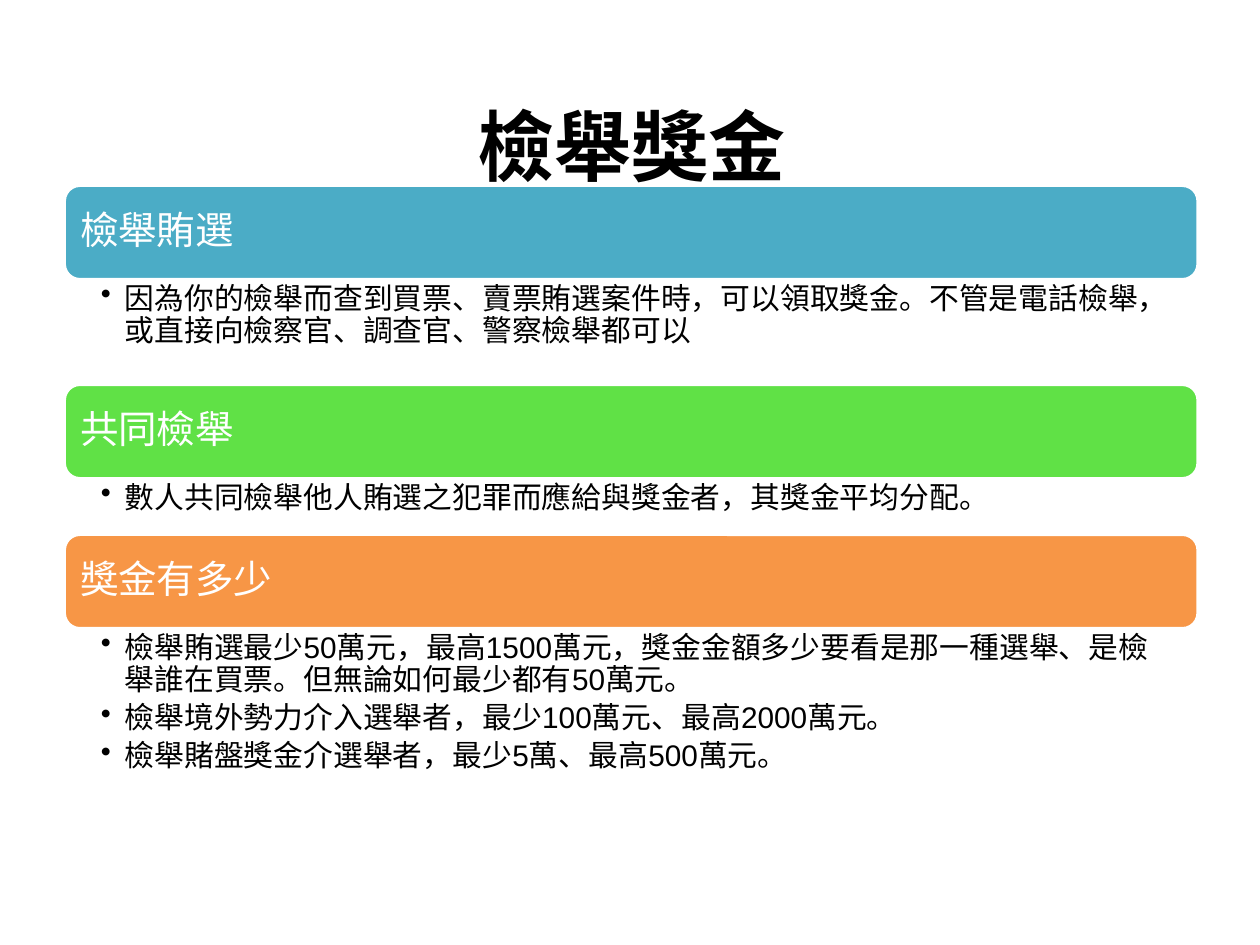
from lxml import etree
from pptx import Presentation
from pptx.dml.color import RGBColor
from pptx.enum.shapes import MSO_SHAPE as Shape
from pptx.enum.text import MSO_ANCHOR as Anchor, PP_ALIGN as Align
from pptx.oxml.ns import qn
from pptx.util import Inches, Pt

LEFT, WIDTH, BAR_HEIGHT = 0.51, 9, 0.75
SECTIONS = [
    ("檢舉賄選", "4BACC6", 0.83, [
        "因為你的檢舉而查到買票、賣票賄選案件時，可以領取獎金。不管是電話檢舉，或直接向檢察官、調查官、警察檢舉都可以",
    ]),
    ("共同檢舉", "60E146", 0.44, [
        "數人共同檢舉他人賄選之犯罪而應給與獎金者，其獎金平均分配。",
    ]),
    ("獎金有多少", "F79646", 1.74, [
        "檢舉賄選最少50萬元，最高1500萬元，獎金金額多少要看是那一種選舉、是檢舉誰在買票。但無論如何最少都有50萬元。",
        "檢舉境外勢力介入選舉者，最少100萬元、最高2000萬元。",
        "檢舉賭盤獎金介選舉者，最少5萬、最高500萬元。",
    ]),
]


def color(value):
    return RGBColor.from_string(value)


def add_run(paragraph, text, size, fill, bold=False):
    run = paragraph.add_run()
    run.text = text
    run.font.name = "Arial"
    run.font.size = Pt(size)
    run.font.bold = bold
    run.font.color.rgb = color(fill)


presentation = Presentation()
presentation.slide_width = Inches(10)
presentation.slide_height = Inches(7.5)
slide = presentation.slides.add_slide(presentation.slide_layouts[5])

title = slide.shapes.title
title.left, title.top = Inches(LEFT), Inches(0.52)
title.width, title.height = Inches(WIDTH), Inches(1.25)
title.text_frame.vertical_anchor = Anchor.MIDDLE
title_paragraph = title.text_frame.paragraphs[0]
title_paragraph.alignment = Align.CENTER
add_run(title_paragraph, "檢舉獎金", 44, "000000", bold=True)

top = 1.47
for heading, fill, list_height, items in SECTIONS:
    bar = slide.shapes.add_shape(Shape.ROUNDED_RECTANGLE, Inches(LEFT), Inches(top),
                                 Inches(WIDTH), Inches(BAR_HEIGHT))
    bar.shadow.inherit = False
    bar.fill.solid()
    bar.fill.fore_color.rgb = color(fill)
    bar.line.color.rgb = color("FFFFFF")
    bar.line.width = Pt(2)
    frame = bar.text_frame
    frame.vertical_anchor = Anchor.MIDDLE
    frame.margin_left = frame.margin_right = Inches(0.09)
    paragraph = frame.paragraphs[0]
    paragraph.alignment = Align.LEFT
    paragraph.line_spacing = 0.9
    paragraph.space_after = Pt(7.7)
    add_run(paragraph, heading, 22, "FFFFFF")
    top += BAR_HEIGHT

    box = slide.shapes.add_textbox(Inches(LEFT), Inches(top), Inches(WIDTH), Inches(list_height))
    frame = box.text_frame
    frame.word_wrap = True
    frame.margin_left, frame.margin_right = Inches(0.29), Inches(0.17)
    frame.margin_top = frame.margin_bottom = Inches(0.03)
    for index, item in enumerate(items):
        paragraph = frame.add_paragraph() if index else frame.paragraphs[0]
        properties = paragraph._p.get_or_add_pPr()
        properties.set("marL", str(Inches(0.19)))
        properties.set("indent", str(Inches(-0.19)))
        etree.SubElement(properties, qn("a:buChar")).set("char", "•")
        paragraph.line_spacing = 0.9
        paragraph.space_after = Pt(3.5)
        add_run(paragraph, item, 17, "000000")
    top += list_height

presentation.save("out.pptx")
